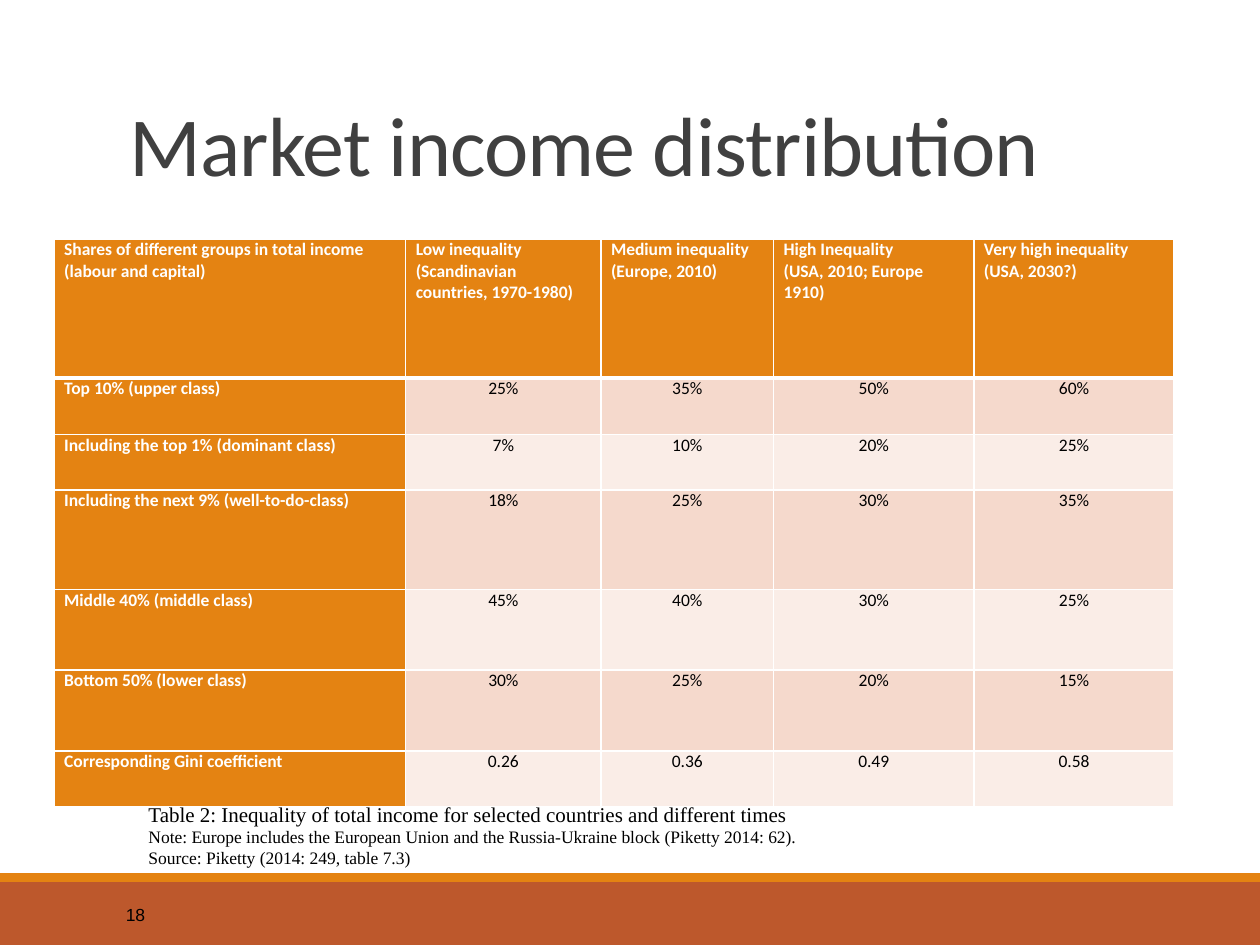
from lxml import etree
from pptx import Presentation
from pptx.dml.color import RGBColor
from pptx.enum.shapes import MSO_CONNECTOR, MSO_SHAPE
from pptx.enum.text import MSO_ANCHOR, MSO_AUTO_SIZE, PP_ALIGN
from pptx.oxml.ns import qn
from pptx.util import Inches, Pt

LEFT, CENTER = PP_ALIGN.LEFT, PP_ALIGN.CENTER
TOP, MIDDLE, BOTTOM = MSO_ANCHOR.TOP, MSO_ANCHOR.MIDDLE, MSO_ANCHOR.BOTTOM

# Content
TITLE = "Market income distribution"
HEAD = [
    "Shares of different groups in total income (labour and capital)",
    "Low inequality\n(Scandinavian countries, 1970-1980)",
    "Medium inequality\n(Europe, 2010)",
    "High Inequality\n(USA, 2010; Europe 1910)",
    "Very high inequality (USA, 2030?)",
]
ROWS = [
    ["Top 10% (upper class)", "25%", "35%", "50%", "60%"],
    ["Including the top 1% (dominant class)", "7%", "10%", "20%", "25%"],
    ["Including the next 9% (well-to-do-class)", "18%", "25%", "30%", "35%"],
    ["Middle 40% (middle class)", "45%", "40%", "30%", "25%"],
    ["Bottom 50% (lower class)", "30%", "25%", "20%", "15%"],
    ["Corresponding Gini coefficient", "0.26", "0.36", "0.49", "0.58"],
]
NOTES = [
    ("Table 2: Inequality of total income for selected countries "
     "and different times", 12),
    ("Note: Europe includes the European Union and the Russia-Ukraine block "
     "(Piketty 2014: 62).", 10),
    ("Source: Piketty (2014: 249, table 7.3)", 10),
]
PAGE = "18"

# Look
WIDE, HIGH = 10, 7.5
COLS = [2.79, 1.55, 1.37, 1.59, 1.59]
TALL = [1.1, 0.45, 0.44, 0.79, 0.64, 0.64, 0.44]
EDGE, RULE = 0.93, 1.9
RUST, GOLD, WHITE, BLACK = "BD582C", "E48312", "FFFFFF", "000000"
BANDS = ["F5D9CC", "FAEDE7"]


def color(text):
    return RGBColor.from_string(text)


def style(para, face, size, tint, bold=False):
    font = para.font
    font.name, font.size, font.bold = face, Pt(size), bold
    font.color.rgb = color(tint)


def place(shape, *box):
    shape.left, shape.top, shape.width, shape.height = map(Inches, box)


def bar(top, tall, tint):
    shape = slide.shapes.add_shape(
        MSO_SHAPE.RECTANGLE, 0, Inches(top), Inches(WIDE), Inches(tall))
    shape.shadow.inherit = False
    shape.fill.solid()
    shape.fill.fore_color.rgb = color(tint)
    shape.line.fill.background()


def text_box(box, anchor):
    frame = slide.shapes.add_textbox(*map(Inches, box)).text_frame
    frame.word_wrap = True
    frame.vertical_anchor = anchor
    return frame


def border(cell, side, width):
    line = etree.SubElement(cell._tc.get_or_add_tcPr(), qn(f"a:ln{side}"),
                            w=str(Pt(width)))
    fill = etree.SubElement(line, qn("a:solidFill"))
    etree.SubElement(fill, qn("a:srgbClr"), val=WHITE)


def fill_cell(cell, text, row, col):
    label = row == 0 or col == 0
    cell.margin_left = cell.margin_right = Inches(0.08)
    cell.margin_top = cell.margin_bottom = 0
    cell.vertical_anchor = TOP
    # The line below the header row is thicker
    for side in "LRTB":
        thick = (row, side) in [(0, "B"), (1, "T")]
        border(cell, side, 3 if thick else 1)
    cell.fill.solid()
    cell.fill.fore_color.rgb = color(GOLD if label else BANDS[(row - 1) % 2])
    cell.text = text
    for para in cell.text_frame.paragraphs:
        para.alignment = LEFT if label else CENTER
        style(para, "Calibri", 10, WHITE if label else BLACK, label)


deck = Presentation()
deck.slide_width, deck.slide_height = Inches(WIDE), Inches(HIGH)
slide = deck.slides.add_slide(deck.slide_layouts[5])

# Footer bands and the rule under the title
bar(7, 0.5, RUST)
bar(6.93, 0.07, GOLD)
rule = slide.shapes.add_connector(
    MSO_CONNECTOR.STRAIGHT, *map(Inches, (0.98, RULE, 9.15, RULE)))
rule.line.color.rgb = color("808080")
rule.line.width = Pt(0.5)
etree.SubElement(rule._element.spPr, qn("a:effectLst"))

# Title
title = slide.shapes.title
place(title, EDGE, 0.36, 8.25, 1.23)
frame = title.text_frame
frame.text = TITLE
frame.auto_size = MSO_AUTO_SIZE.NONE
frame.vertical_anchor = BOTTOM
para = frame.paragraphs[0]
para.alignment, para.line_spacing = LEFT, 0.85
style(para, "Calibri", 48, "404040")
para.runs[0]._r.get_or_add_rPr().set("spc", "-50")

# Table
grid = [HEAD] + ROWS
table = slide.shapes.add_table(
    len(grid), len(COLS), Inches(0.43), Inches(RULE),
    Inches(sum(COLS)), Inches(sum(TALL))).table
table.first_col = True
for col, wide in zip(table.columns, COLS):
    col.width = Inches(wide)
for row, tall in zip(table.rows, TALL):
    row.height = Inches(tall)
for r, line in enumerate(grid):
    for c, text in enumerate(line):
        fill_cell(table.cell(r, c), text, r, c)

# Page number
para = text_box((0.9, 7.06, 2.03, 0.4), MIDDLE).paragraphs[0]
para.text = PAGE
style(para, "Arial", 10, BLACK)

# Caption and notes
frame = text_box((EDGE, 6.31, 8.08, 0.84), TOP)
frame.text = "\n".join(text for text, size in NOTES)
for para, (text, size) in zip(frame.paragraphs, NOTES):
    style(para, "Times New Roman", size, BLACK)
    para._p.get_or_add_pPr().set("indent", str(Inches(0.15)))

deck.save("out.pptx")
